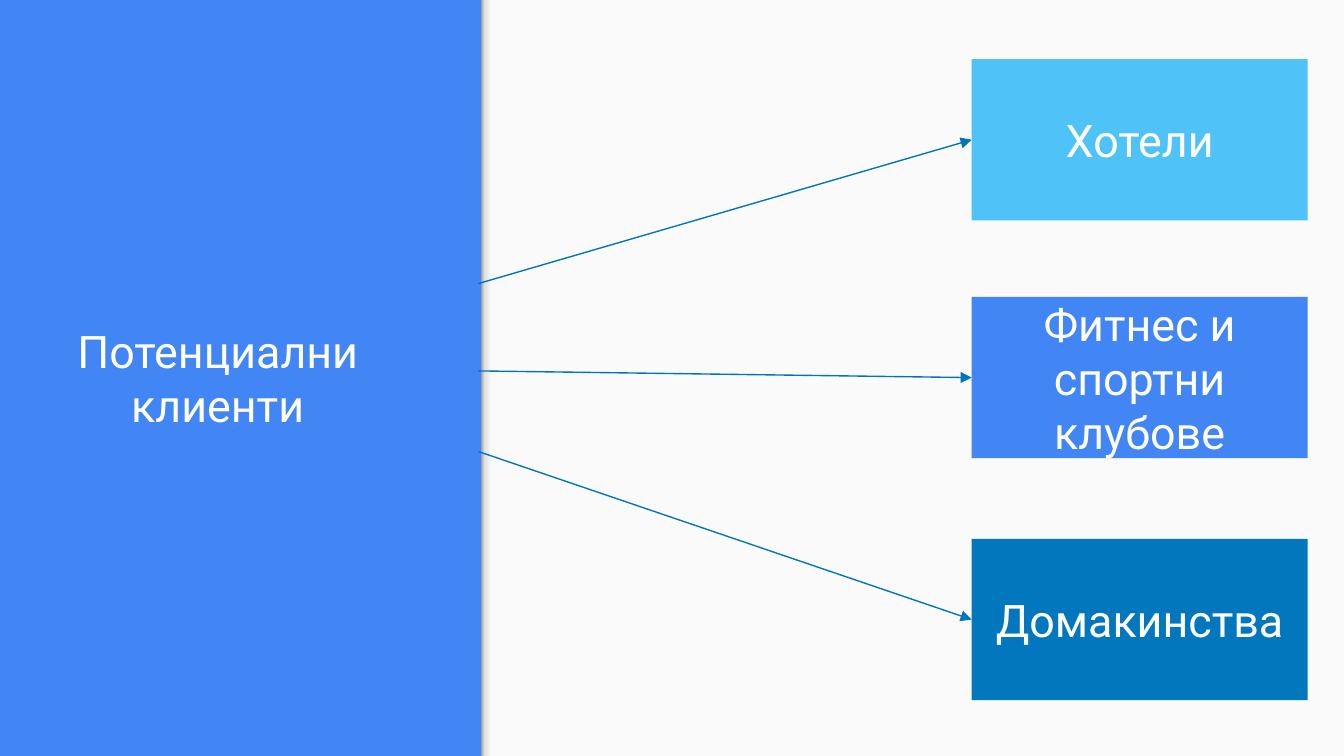
from lxml.etree import SubElement
from pptx import Presentation
from pptx.dml.color import RGBColor
from pptx.enum.shapes import MSO_CONNECTOR, MSO_SHAPE
from pptx.enum.text import MSO_ANCHOR, MSO_AUTO_SIZE, PP_ALIGN
from pptx.oxml.ns import qn
from pptx.util import Inches, Pt

COLORS = {
    "blue": "4285F4",
    "sky": "4FC3F7",
    "navy": "0277BD",
    "arrow": "0075BB",
    "panel": "FAFAFA",
    "text": "FFFFFF",
}
EDGE_STOPS = [(0, "999999"), (20, "DEDEDE"), (64, "F9F9F9"), (100, "F9F9F9")]
WIDTH = 10
HEIGHT = WIDTH * 9 / 16
PANEL_LEFT = 3.58
BOX_LEFT, BOX_WIDTH, BOX_HEIGHT = 7.23, 2.5, 1.2
ARROW_LEFT = 3.56
CLIENTS = [
    ("Хотели", "sky", 0.44, 2.11),
    ("Фитнес и спортни клубове", "blue", 2.21, 2.76),
    ("Домакинства", "navy", 4.01, 3.36),
]


def rgb(name):
    return RGBColor.from_string(COLORS[name])


def add_rect(s, left, top, width, height):
    sp = s.shapes.add_shape(MSO_SHAPE.RECTANGLE, Inches(left), Inches(top),
                            Inches(width), Inches(height))
    sp.shadow.inherit = False
    sp.line.fill.background()
    return sp


def fill_solid(sp, color):
    sp.fill.solid()
    sp.fill.fore_color.rgb = rgb(color)


def add_panel(s):
    panel = add_rect(s, PANEL_LEFT, 0, WIDTH - PANEL_LEFT, HEIGHT)
    fill_solid(panel, "panel")
    edge = add_rect(s, PANEL_LEFT, 0, 0.12, HEIGHT)
    edge.fill.gradient()
    edge.fill.gradient_angle = 0
    stops = edge._element.spPr.find(qn("a:gradFill")).find(qn("a:gsLst"))
    for stop in list(stops):
        stops.remove(stop)
    for pos, color in EDGE_STOPS:
        stop = SubElement(stops, qn("a:gs"), pos=str(pos * 1000))
        SubElement(stop, qn("a:srgbClr"), val=color)


def write_label(sp, text):
    tf = sp.text_frame
    tf.word_wrap = True
    tf.auto_size = MSO_AUTO_SIZE.NONE
    tf.vertical_anchor = MSO_ANCHOR.MIDDLE
    tf.margin_left = tf.margin_right = Inches(0.1)
    tf.margin_top = tf.margin_bottom = Inches(0.1)
    p = tf.paragraphs[0]
    p.alignment = PP_ALIGN.CENTER
    r = p.add_run()
    r.text = text
    r.font.name = "Roboto"
    r.font.size = Pt(24)
    r.font.color.rgb = rgb("text")


def add_title(s, text):
    sp = s.shapes.title
    sp.left, sp.top = Inches(0.37), Inches(2.21)
    sp.width, sp.height = Inches(BOX_WIDTH), Inches(BOX_HEIGHT)
    fill_solid(sp, "blue")
    write_label(sp, text)


def add_client(s, text, color, top):
    sp = add_rect(s, BOX_LEFT, top, BOX_WIDTH, BOX_HEIGHT)
    fill_solid(sp, color)
    write_label(sp, text)
    return sp


def add_arrow(s, start, box):
    line = s.shapes.add_connector(MSO_CONNECTOR.STRAIGHT, Inches(ARROW_LEFT),
                                  Inches(start), box.left, box.top)
    line.end_connect(box, 1)
    line.line.color.rgb = rgb("arrow")
    line.line.width = Pt(0.75)
    SubElement(line.line._get_or_add_ln(), qn("a:tailEnd"), type="triangle")
    SubElement(line._element.spPr, qn("a:effectLst"))


def main():
    prs = Presentation()
    prs.slide_width, prs.slide_height = Inches(WIDTH), Inches(HEIGHT)
    s = prs.slides.add_slide(prs.slide_layouts[5])
    s.background.fill.solid()
    s.background.fill.fore_color.rgb = rgb("blue")
    add_panel(s)
    add_title(s, "Потенциални клиенти")
    for text, color, top, start in CLIENTS:
        box = add_client(s, text, color, top)
        add_arrow(s, start, box)
    prs.save("out.pptx")


if __name__ == "__main__":
    main()
